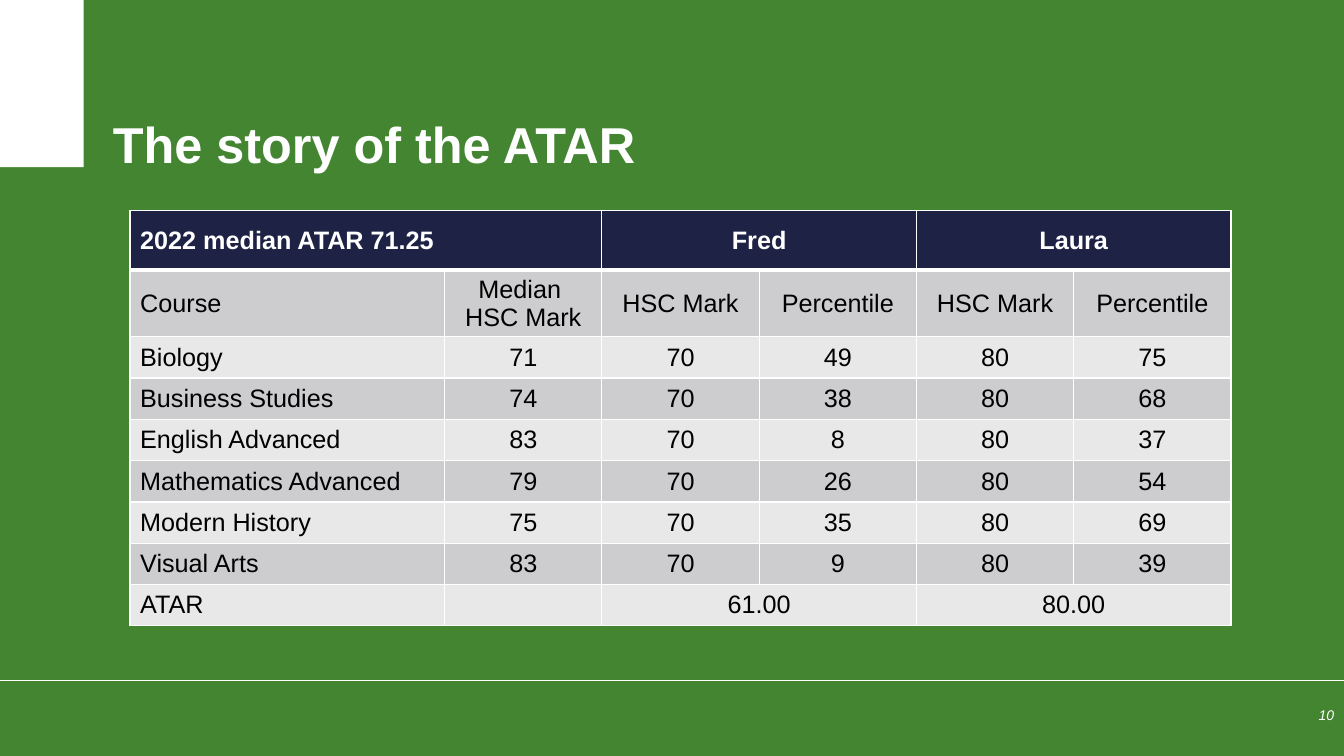
from lxml.etree import SubElement
from pptx import Presentation
from pptx.dml.color import RGBColor
from pptx.enum.shapes import MSO_CONNECTOR, MSO_SHAPE
from pptx.enum.text import MSO_ANCHOR, MSO_AUTO_SIZE, PP_ALIGN
from pptx.oxml.ns import qn
from pptx.util import Inches, Pt

GREEN, WHITE, BLACK = "448532", "FFFFFF", "000000"
NAVY, GREY, PALE_GREY = "1E2245", "CDCDCF", "E8E8E9"

COLUMN_WIDTHS = [3.12] + [1.56] * 5
ROW_HEIGHTS = [0.59] * 2 + [0.41] * 7
ROWS = [
    ["2022 median ATAR 71.25", "", "Fred", "", "Laura", ""],
    ["Course", "Median \nHSC Mark"] + ["HSC Mark", "Percentile"] * 2,
    ["Biology", "71", "70", "49", "80", "75"],
    ["Business Studies", "74", "70", "38", "80", "68"],
    ["English Advanced", "83", "70", "8", "80", "37"],
    ["Mathematics Advanced", "79", "70", "26", "80", "54"],
    ["Modern History", "75", "70", "35", "80", "69"],
    ["Visual Arts", "83", "70", "9", "80", "39"],
    ["ATAR", "", "61.00", "", "80.00", ""],
]
LAST_ROW = len(ROWS) - 1
MERGED_PAIRS = [(0, 0), (0, 2), (0, 4), (LAST_ROW, 2), (LAST_ROW, 4)]


def color(hex_string):
    return RGBColor.from_string(hex_string)


class SlideBuilder:
    """Holds the text style and the slide being built."""

    def __init__(self, slide, background, font_name="Arial"):
        self.slide = slide
        self.font_name = font_name
        slide.background.fill.solid()
        slide.background.fill.fore_color.rgb = color(background)

    def set_text(self, text_frame, text, align, font_color, **font_format):
        text_frame.text = text
        for paragraph in text_frame.paragraphs:
            paragraph.alignment = align
            for run in paragraph.runs:
                run.font.name = self.font_name
                run.font.color.rgb = color(font_color)
                for attribute, value in font_format.items():
                    setattr(run.font, attribute, value)

    def frame(self, shape, anchor):
        """Set wrapping, anchor and equal insets, and return the text frame."""
        text_frame = shape.text_frame
        settings = {"word_wrap": True, "auto_size": MSO_AUTO_SIZE.NONE,
                    "vertical_anchor": anchor}
        for side in ("left", "top", "right", "bottom"):
            settings[f"margin_{side}"] = Inches(0.1)
        for attribute, value in settings.items():
            setattr(text_frame, attribute, value)
        return text_frame

    def title(self, text, left, top, width, height):
        title = self.slide.shapes.title
        title.left, title.top = Inches(left), Inches(top)
        title.width, title.height = Inches(width), Inches(height)
        text_frame = self.frame(title, MSO_ANCHOR.BOTTOM)
        self.set_text(text_frame, text, PP_ALIGN.LEFT, WHITE, size=Pt(36), bold=True)
        text_frame.paragraphs[0].line_spacing = 0.9

    def text_box(self, text, left, top, width, height, align, **font_format):
        box = self.slide.shapes.add_textbox(
            Inches(left), Inches(top), Inches(width), Inches(height))
        self.set_text(self.frame(box, MSO_ANCHOR.MIDDLE), text, align, WHITE, **font_format)

    def rectangle(self, left, top, width, height, fill):
        shape = self.slide.shapes.add_shape(
            MSO_SHAPE.RECTANGLE, Inches(left), Inches(top), Inches(width), Inches(height))
        shape.shadow.inherit = False
        shape.fill.solid()
        shape.fill.fore_color.rgb = color(fill)
        shape.line.fill.background()

    def horizontal_line(self, left, top, width, line_color, weight):
        line = self.slide.shapes.add_connector(
            MSO_CONNECTOR.STRAIGHT, Inches(left), Inches(top), Inches(left + width), Inches(top))
        line.line.color.rgb = color(line_color)
        line.line.width = Pt(weight)
        SubElement(line._element.spPr, qn("a:effectLst"))

    def borders(self, cell, line_color, **weights):
        """Draw cell borders; weights are points for L, R, T and B."""
        properties = cell._tc.get_or_add_tcPr()
        for side in "LRTB":
            border = SubElement(properties, qn(f"a:ln{side}"), w=str(Pt(weights.get(side, 1))))
            fill = SubElement(border, qn("a:solidFill"))
            SubElement(fill, qn("a:srgbClr"), val=line_color)

    def table(self, left, top):
        table = self.slide.shapes.add_table(
            len(ROWS), len(COLUMN_WIDTHS), Inches(left), Inches(top),
            Inches(sum(COLUMN_WIDTHS)), Inches(sum(ROW_HEIGHTS))).table
        for column, width in zip(table.columns, COLUMN_WIDTHS):
            column.width = Inches(width)
        for row, height in zip(table.rows, ROW_HEIGHTS):
            row.height = Inches(height)
        for row_index, texts in enumerate(ROWS):
            is_header = row_index == 0
            fill = NAVY if is_header else GREY if row_index % 2 else PALE_GREY
            edges = {0: {"B": 3}, 1: {"T": 3}}.get(row_index, {})
            for column_index, text in enumerate(texts):
                cell = table.cell(row_index, column_index)
                self.borders(cell, WHITE, **edges)
                cell.fill.solid()
                cell.fill.fore_color.rgb = color(fill)
                cell.vertical_anchor = MSO_ANCHOR.MIDDLE
                self.set_text(cell.text_frame, text,
                              PP_ALIGN.CENTER if column_index else PP_ALIGN.LEFT,
                              WHITE if is_header else BLACK, size=Pt(18), bold=is_header)
        for row_index, column_index in MERGED_PAIRS:
            table.cell(row_index, column_index).merge(table.cell(row_index, column_index + 1))


def main():
    presentation = Presentation()
    presentation.slide_width = Inches(13.33)
    presentation.slide_height = Inches(7.5)
    title_only = presentation.slide_layouts.get_by_name("Title Only")
    builder = SlideBuilder(presentation.slides.add_slide(title_only), GREEN)
    builder.rectangle(0, 0, 0.83, 1.66, WHITE)
    builder.horizontal_line(0, 6.75, 13.33, WHITE, 0.5)
    builder.title("The story of the ATAR", 1.02, 0, 10.9, 1.83)
    builder.text_box("10", 12.5, 6.89, 0.83, 0.4, PP_ALIGN.RIGHT, size=Pt(10), italic=True)
    builder.table(1.29, 2.09)
    presentation.save("out.pptx")


if __name__ == "__main__":
    main()
